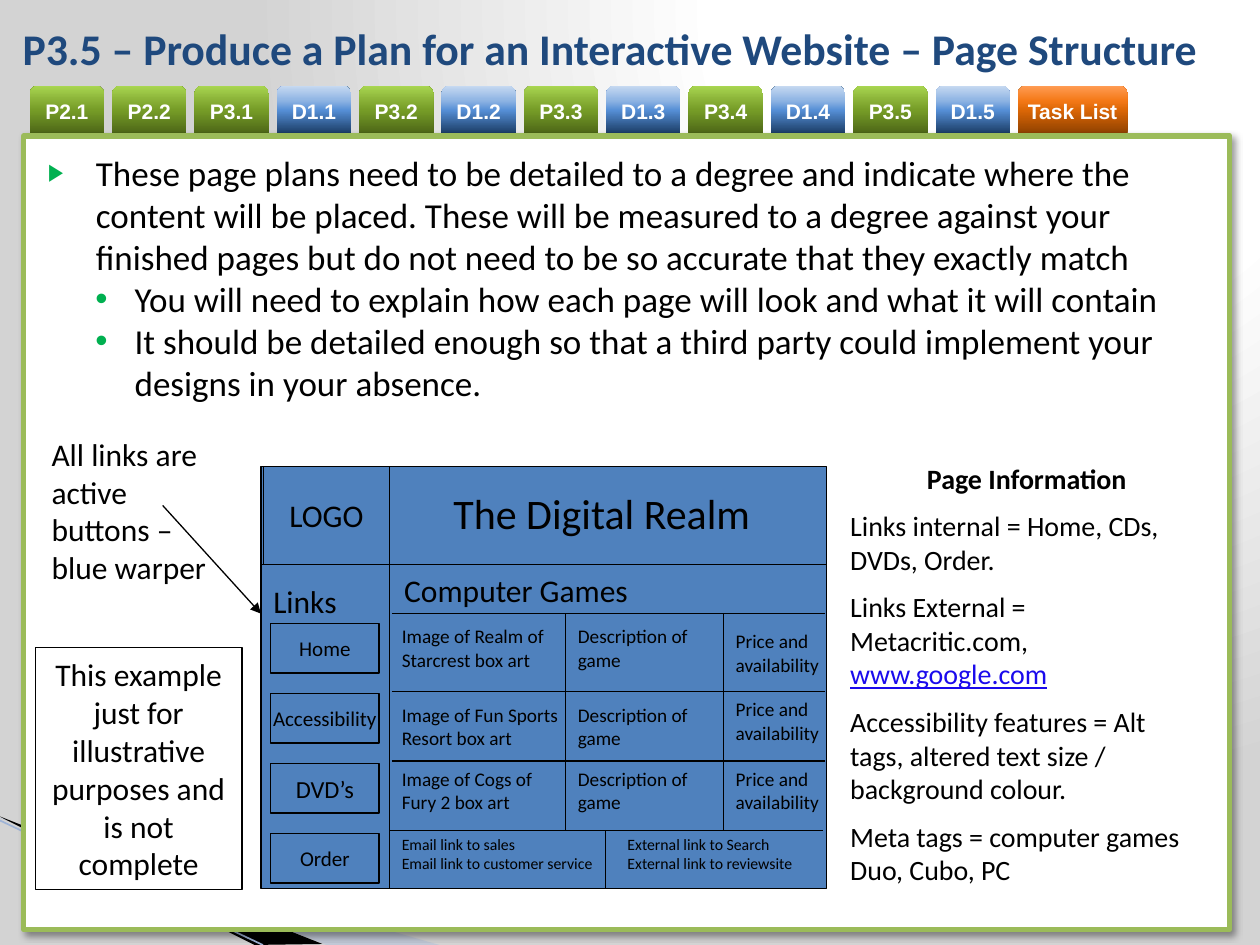
from lxml.etree import SubElement
from pptx import Presentation
from pptx.dml.color import RGBColor
from pptx.enum.shapes import MSO_CONNECTOR, MSO_SHAPE
from pptx.enum.text import MSO_ANCHOR, MSO_AUTO_SIZE, PP_ALIGN
from pptx.oxml import parse_xml
from pptx.oxml.ns import nsdecls, qn
from pptx.util import Cm, Pt

hue = RGBColor.from_string
BLUE, GREEN = "4F81BD", "00B050"

deck = Presentation()
deck.slide_width, deck.slide_height = Cm(25.4), Cm(19.05)
slide = deck.slides.add_slide(deck.slide_layouts[1])
shapes = slide.shapes


def write(shape, rows, size, align=PP_ALIGN.LEFT, gap=0, font="Calibri", ink="000000"):
    """Fill a shape with paragraphs; each row is a list of run texts."""
    frame = shape.text_frame
    frame.word_wrap = True
    frame.auto_size = MSO_AUTO_SIZE.NONE
    for i, row in enumerate(rows):
        para = frame.paragraphs[0] if i == 0 else frame.add_paragraph()
        para.alignment = align
        para.space_before = Pt(gap if i else 0)
        for text in row:
            run = para.add_run()
            run.text = text
            run.font.size = Pt(size)
            run.font.name = font
            run.font.color.rgb = hue(ink)
    return frame


def rule(x1, y1, x2, y2, ink="000000", width=0.75):
    line = shapes.add_connector(MSO_CONNECTOR.STRAIGHT, Cm(x1), Cm(y1), Cm(x2), Cm(y2))
    line.line.color.rgb = hue(ink)
    line.line.width = Pt(width)
    SubElement(line._element.spPr, qn("a:effectLst"))
    return line


# Background
slide.background.fill.solid()
solid = slide.background._cSld.find(".//" + qn("a:solidFill"))
solid.getparent().replace(solid, parse_xml(
    f'<a:gradFill {nsdecls("a")} rotWithShape="1"><a:gsLst>'
    '<a:gs pos="0"><a:srgbClr val="FFFFFF"/></a:gs>'
    '<a:gs pos="40000"><a:srgbClr val="FFFFFF"/></a:gs>'
    '<a:gs pos="100000"><a:srgbClr val="D3D3D3"/></a:gs></a:gsLst>'
    '<a:path path="circle"><a:fillToRect l="65000" b="98000"/></a:path></a:gradFill>'))

# Corner wedges
wedges = [
    ([(0, 16.5), (8.86, 19.05), (6.58, 19.05), (0, 16.48)], "A7B9DB", 40),
    ([(0, 16.46), (6.5, 19.03), (5.13, 19.05), (0.03, 16.48)], "000000", 100),
]
for spots, ink, alpha in wedges:
    first, *rest = [(Cm(x), Cm(y)) for x, y in spots]
    path = shapes.build_freeform(*first)
    path.add_line_segments(rest)
    wedge = path.convert_to_shape()
    wedge.shadow.inherit = False
    wedge.fill.solid()
    wedge.fill.fore_color.rgb = hue(ink)
    wedge.line.fill.background()
    tint = wedge._element.spPr.find(".//" + qn("a:srgbClr"))
    SubElement(tint, qn("a:alpha"), val=str(alpha * 1000))
rule(0, 16.54, 5.3, 19.05, "9EB3D6", 0.95)

# Tabs, coloured by their first letter
shades = {
    "P": ("4A6316", "769C27", "89B137", "A9D651"),
    "D": ("17375E", "558ED5", "8EB4E3", "C6D9F1"),
    "T": ("8B3F00", "DA6606", "F47917", "FF9C54"),
}
names = ["P2.1", "P2.2", "P3.1", "D1.1", "P3.2", "D1.2", "P3.3",
         "D1.3", "P3.4", "D1.4", "P3.5", "D1.5", "Task List"]
for i, name in enumerate(names):
    wide = 2.21 if name == "Task List" else 1.5
    tab = shapes.add_shape(MSO_SHAPE.ROUND_2_SAME_RECTANGLE,
                           Cm(0.6 + 1.66 * i), Cm(1.73), Cm(wide), Cm(0.99))
    tab.shadow.inherit = False
    tab.line.fill.background()
    stops = "".join(f'<a:gs pos="{spot}000"><a:srgbClr val="{ink}"/></a:gs>'
                    for spot, ink in zip((0, 50, 70, 100), shades[name[0]]))
    tab._element.spPr.find(qn("a:prstGeom")).addnext(parse_xml(
        f'<a:gradFill {nsdecls("a")}><a:gsLst>{stops}</a:gsLst>'
        '<a:lin ang="16200000" scaled="0"/></a:gradFill>'))
    frame = write(tab, [[name]], 12, PP_ALIGN.CENTER, font="Arial", ink="FFFFFF")
    frame.margin_left = frame.margin_right = frame.margin_top = frame.margin_bottom = 0
    frame.vertical_anchor = MSO_ANCHOR.MIDDLE
    frame.paragraphs[0].runs[0].font.bold = True

# White panel
panel = shapes.add_shape(MSO_SHAPE.RECTANGLE, Cm(0.48), Cm(2.74), Cm(24.31), Cm(16))
panel.fill.solid()
panel.fill.fore_color.rgb = hue("FFFFFF")
panel.line.color.rgb = hue("9BBB59")
panel.line.width = Pt(3)
panel._element.spPr.append(parse_xml(
    f'<a:effectLst {nsdecls("a")}><a:outerShdw blurRad="{Pt(4)}" dist="{Pt(3)}" '
    'dir="2700000" algn="tl" rotWithShape="0"><a:srgbClr val="000000">'
    '<a:alpha val="40000"/></a:srgbClr></a:outerShdw></a:effectLst>'))

# Title and list, brought in front of the panel
title, body = shapes.title, slide.placeholders[1]
for holder, (x, y, w, h) in ((title, (0.2, 0.2, 24.61, 1.52)),
                             (body, (0.71, 2.92, 23.8, 6.2))):
    holder.left, holder.top, holder.width, holder.height = Cm(x), Cm(y), Cm(w), Cm(h)
    shapes._spTree.append(holder._element)
head = write(title, [["P3.5 – Produce a Plan for an Interactive Website – Page Structure"]],
             25, ink="1F497D")
head.vertical_anchor = MSO_ANCHOR.MIDDLE
head.paragraphs[0].runs[0].font.bold = True

points = write(body, [
    ["These page plans need to be detailed to a degree and indicate where the content "
     "will be placed. These will be measured to a degree against your finished pages "
     "but do not need to be so accurate that they exactly match"],
    ["You will need to explain how each page will look and what it will contain"],
    ["It should be detailed enough so that a third party could implement your designs "
     "in your absence."],
], 20)
for para, level in zip(points.paragraphs, (0, 1, 1)):
    para.level = level
    left, hang, scale, mark = ((0.97, 0.97, 68, "▶"), (1.75, 0.79, 100, "•"))[level]
    props = para._p.get_or_add_pPr()
    props.set("marL", str(Cm(left)))
    props.set("indent", str(-Cm(hang)))
    SubElement(SubElement(props, qn("a:buClr")), qn("a:srgbClr"), val=GREEN)
    SubElement(props, qn("a:buSzPct"), val=str(scale * 1000))
    SubElement(props, qn("a:buFont"), typeface="Arial")
    SubElement(props, qn("a:buChar"), char=mark)

# Page frame, logo cell, note and link buttons
boxes = [
    (5.26, 9.4, 11.4, 8.51, "", 12, BLUE),
    (5.31, 9.4, 2.54, 1.98, "LOGO", 18, None),
    (0.71, 13.06, 4.17, 4.88,
     "This example just for illustrative purposes and is not complete", 18, None),
]
buttons = [("Home", 12), ("Accessibility", 12), ("DVD’s", 14), ("Order", 12)]
for i, (name, size) in enumerate(buttons):
    boxes.append((5.46, 12.57 + 1.41 * i, 2.18, 1, name, size, BLUE))
for x, y, w, h, text, size, fill in boxes:
    box = shapes.add_shape(MSO_SHAPE.RECTANGLE, Cm(x), Cm(y), Cm(w), Cm(h))
    box.shadow.inherit = False
    box.line.color.rgb = hue("000000")
    box.line.width = Pt(0.75)
    if fill:
        box.fill.solid()
        box.fill.fore_color.rgb = hue(fill)
    else:
        box.fill.background()
    if text:
        frame = write(box, [[text]], size, PP_ALIGN.CENTER)
        frame.vertical_anchor = MSO_ANCHOR.MIDDLE
        frame.word_wrap = h > 1

# Page grid
rule(5.26, 11.38, 16.66, 11.38)
for y in (12.37, 13.94, 15.34):
    rule(7.9, y, 16.64, y)
rule(7.85, 16.74, 16.59, 16.74)
for x, top, end in ((7.85, 11.38, 17.93), (11.4, 12.37, 16.74),
                    (14.58, 12.37, 16.74), (12.21, 16.74, 17.93)):
    rule(x, top, x, end)
arrow = rule(3.28, 10.19, 5.26, 12.37)
SubElement(arrow.line._get_or_add_ln(), qn("a:tailEnd"), type="triangle")

# Labels and grid cells
labels = [
    (0.79, 8.64, 4.06, 3.33, ["All links are active buttons – blue warper"], 18),
    (5.26, 11.61, 2.9, 1.02, ["Links"], 18),
    (8.89, 9.7, 7.54, 1.27, ["The Digital Realm"], 24),
    (7.9, 11.38, 6.6, 1.02, ["Computer Games"], 18),
    (7.85, 16.7, 4.57, 1.02, ["Email link to sales", "Email link to customer service"], 9),
    (12.4, 16.7, 4.57, 1.02, ["External link to Search", "External link to reviewsite"], 9),
]
games = [("Realm of Starcrest", 4.37, 12.47, 12.57),
         ("Fun Sports Resort", 4.37, 14.05, 13.94),
         ("Cogs of Fury 2", 3.58, 15.34, 15.34)]
for game, wide, top, low in games:
    labels += [
        (7.85, top, wide, 1.19, [f"Image of {game} box art"], 11),
        (11.4, top, 3.18, 1.19, ["Description of game"], 11),
        (14.58, low, 2.39, 1.19, ["Price and availability"], 11),
    ]
for x, y, w, h, rows, size in labels:
    write(shapes.add_textbox(Cm(x), Cm(y), Cm(w), Cm(h)), [[row] for row in rows], size)

# Page information
info = write(shapes.add_textbox(Cm(16.89), Cm(9.17), Cm(7.62), Cm(9.14)), [
    ["Page Information"],
    ["Links internal = Home, CDs, DVDs, Order."],
    ["Links External = Metacritic.com, ", "www.google.com"],
    ["Accessibility features = Alt tags, altered text size / background colour."],
    ["Meta tags = computer games Duo, Cubo, PC"],
], 16, gap=8)
info.paragraphs[0].alignment = PP_ALIGN.CENTER
info.paragraphs[0].runs[0].font.bold = True
link = info.paragraphs[2].runs[1].font
link.underline = True
link.color.rgb = hue("1A0AEC")

deck.save("out.pptx")
